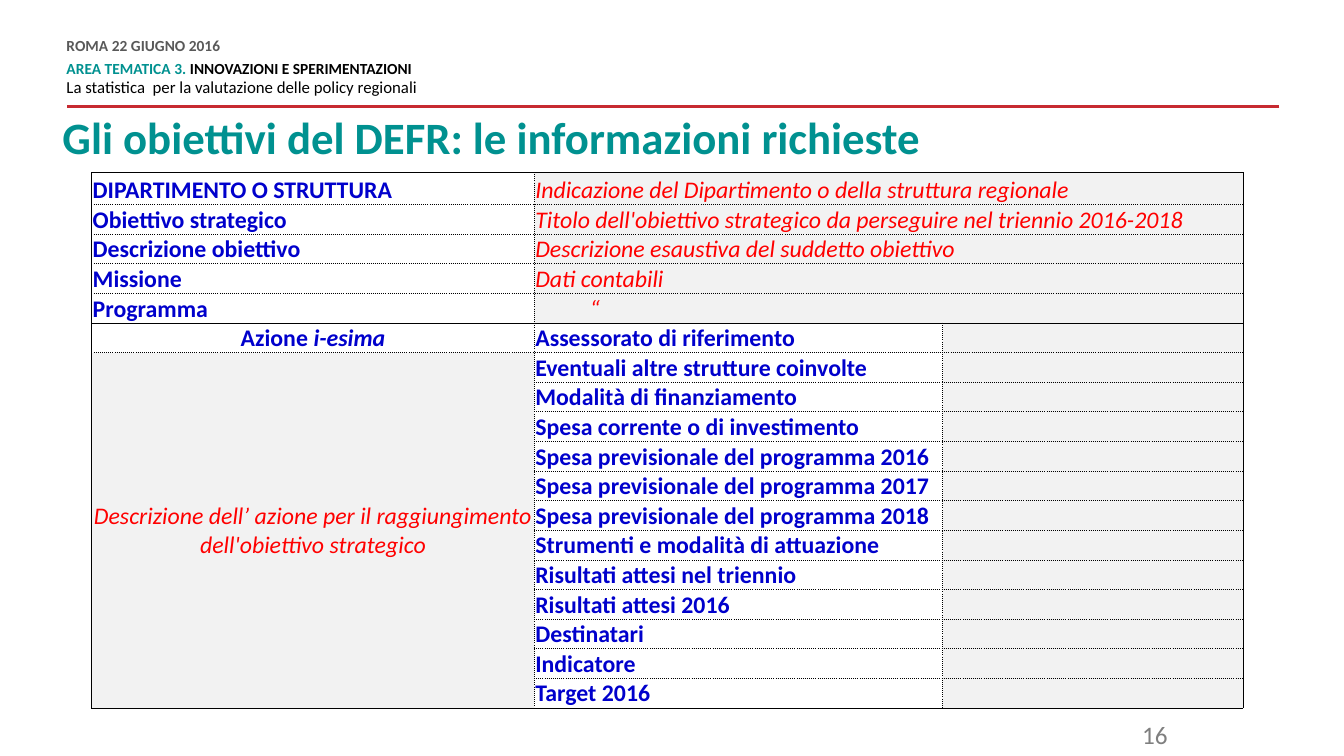
"""Builds the slide on the information required for the DEFR objectives."""
from lxml import etree
from pptx import Presentation
from pptx.dml.color import RGBColor
from pptx.enum import shapes, text
from pptx.oxml.ns import qn
from pptx.util import Pt

PX = 9144
THEME = {
    "font": "Calibri", "teal": "009190", "rule": "C72A31", "grey": "595959",
    "page": "7F7F7F", "blue": "0000CC", "red": "FF0000", "black": "000000",
    "cell": "F2F2F2", "head": 11, "sub": 12, "title": 32, "body": 17, "num": 18,
}


def style(font, size, color, bold=False, italic=False):
    font.name, font.size = THEME["font"], Pt(THEME[size])
    font.bold, font.italic = bold, italic
    font.color.rgb = RGBColor.from_string(THEME[color])


def add_box(left, top, width, height, inset=0):
    frame = slide.shapes.add_textbox(left * PX, top * PX, width * PX, height * PX).text_frame
    frame.word_wrap = True
    if inset == 0:
        frame.margin_left = frame.margin_right = frame.margin_top = frame.margin_bottom = 0
    return frame


prs = Presentation()
prs.slide_width, prs.slide_height = 1333 * PX, 750 * PX
slide = prs.slides.add_slide(prs.slide_layouts[6])

rule = slide.shapes.add_connector(
    shapes.MSO_CONNECTOR.STRAIGHT, 1269 * PX, 106 * PX, 66 * PX, 106 * PX)
rule.line.color.rgb = RGBColor.from_string(THEME["rule"])
rule.line.width = Pt(2)
etree.SubElement(rule._element.spPr, qn("a:effectLst"))

head = add_box(66, 39, 834, 59)
date, area, topic = head.paragraphs[0], head.add_paragraph(), head.add_paragraph()
for par in (date, area, topic):
    par.line_spacing = Pt(10.8)
date.text = "ROMA 22 GIUGNO 2016"
style(date.font, "head", "grey", bold=True)
date.space_after = topic.space_after = Pt(6)
for words, color in (("AREA TEMATICA 3. ", "teal"), ("INNOVAZIONI E SPERIMENTAZIONI", "black")):
    run = area.add_run()
    run.text = words
    style(run.font, "head", color, bold=True)
topic.text = "La statistica  per la valutazione delle policy regionali"
topic.space_before = Pt(3)
style(topic.font, "sub", "black")

page = add_box(1050, 709, 118, 35, inset=1).paragraphs[0]
page.text = "16"
page.alignment = text.PP_ALIGN.RIGHT
style(page.font, "num", "page")

title = add_box(62, 115, 1170, 81).paragraphs[0]
title.text = "Gli obiettivi del DEFR: le informazioni richieste"
title.line_spacing = 0.9
style(title.font, "title", "teal", bold=True)

FIELDS = [
    ("DIPARTIMENTO O STRUTTURA", "Indicazione del Dipartimento o della struttura regionale"),
    ("Obiettivo strategico",
     "Titolo dell'obiettivo strategico da perseguire nel triennio 2016-2018"),
    ("Descrizione obiettivo", "Descrizione esaustiva del suddetto obiettivo"),
    ("Missione", "Dati contabili"),
    ("Programma", "“"),
]
ITEMS = [
    "Assessorato di riferimento", "Eventuali altre strutture coinvolte",
    "Modalità di finanziamento", "Spesa corrente o di investimento",
    "Spesa previsionale del programma 2016", "Spesa previsionale del programma 2017",
    "Spesa previsionale del programma 2018", "Strumenti e modalità di attuazione",
    "Risultati attesi nel triennio", "Risultati attesi 2016", "Destinatari",
    "Indicatore", "Target 2016",
]
WIDTHS = [439, 405, 298]
split = len(FIELDS)
count = split + len(ITEMS)
grid = slide.shapes.add_table(
    count, 3, 91 * PX, 171 * PX, sum(WIDTHS) * PX, (32 + 29 * (count - 1)) * PX).table
grid.first_row = grid.horz_banding = False
for col, width in zip(grid.columns, WIDTHS):
    col.width = width * PX
for row in grid.rows:
    row.height = 29 * PX
grid.rows[0].height = 32 * PX

words = {(split, 0): "Azione ", (split + 1, 0):
         "Descrizione dell’ azione per il raggiungimento dell'obiettivo strategico"}
for r, (name, value) in enumerate(FIELDS):
    words[r, 0], words[r, 1] = name, value
    grid.cell(r, 1).merge(grid.cell(r, 2))
for r, item in enumerate(ITEMS, split):
    words[r, 1] = item
grid.cell(split + 1, 0).merge(grid.cell(count - 1, 0))

for r in range(count):
    for c in range(3):
        cell = grid.cell(r, c)
        cell.margin_left = cell.margin_right = cell.margin_top = PX
        cell.margin_bottom = 0
        cell.vertical_anchor = text.MSO_ANCHOR.BOTTOM
        par = cell.text_frame.paragraphs[0]
        par.text = words.get((r, c), "")
        shaded = c == 2 or (c == 1 and r < split) or (c == 0 and r > split)
        label = not shaded
        style(par.font, "body", "blue" if label else "red", bold=label, italic=shaded)
        if c == 0 and r >= split:
            par.alignment = text.PP_ALIGN.CENTER
        if shaded:
            cell.fill.solid()
            cell.fill.fore_color.rgb = RGBColor.from_string(THEME["cell"])
        else:
            cell.fill.background()

        wide = cell.span_width if cell.is_merge_origin else 1
        tall = cell.span_height if cell.is_merge_origin else 1
        sides = {"lnL": c == 0, "lnR": c + wide == 3, "lnT": r in (0, split),
                 "lnB": r + tall in (split, count)}
        props = cell._tc.get_or_add_tcPr()
        for spot, (tag, solid) in enumerate(sides.items()):
            edge = etree.Element(qn("a:" + tag), w=str(Pt(0.5)))
            if cell.is_spanned and not solid:
                etree.SubElement(edge, qn("a:noFill"))
            else:
                fill = etree.SubElement(edge, qn("a:solidFill"))
                etree.SubElement(fill, qn("a:srgbClr"), val=THEME["black"])
                etree.SubElement(edge, qn("a:prstDash"), val="solid" if solid else "sysDot")
            props.insert(spot, edge)

grid.cell(split + 1, 0).vertical_anchor = text.MSO_ANCHOR.MIDDLE
ditto = grid.cell(split - 1, 1).text_frame.paragraphs[0]
ditto._p.get_or_add_pPr().set("marL", str(54 * PX))
step = grid.cell(split, 0).text_frame.paragraphs[0].add_run()
step.text = "i-esima"
step.font.italic = True

prs.save("out.pptx")
